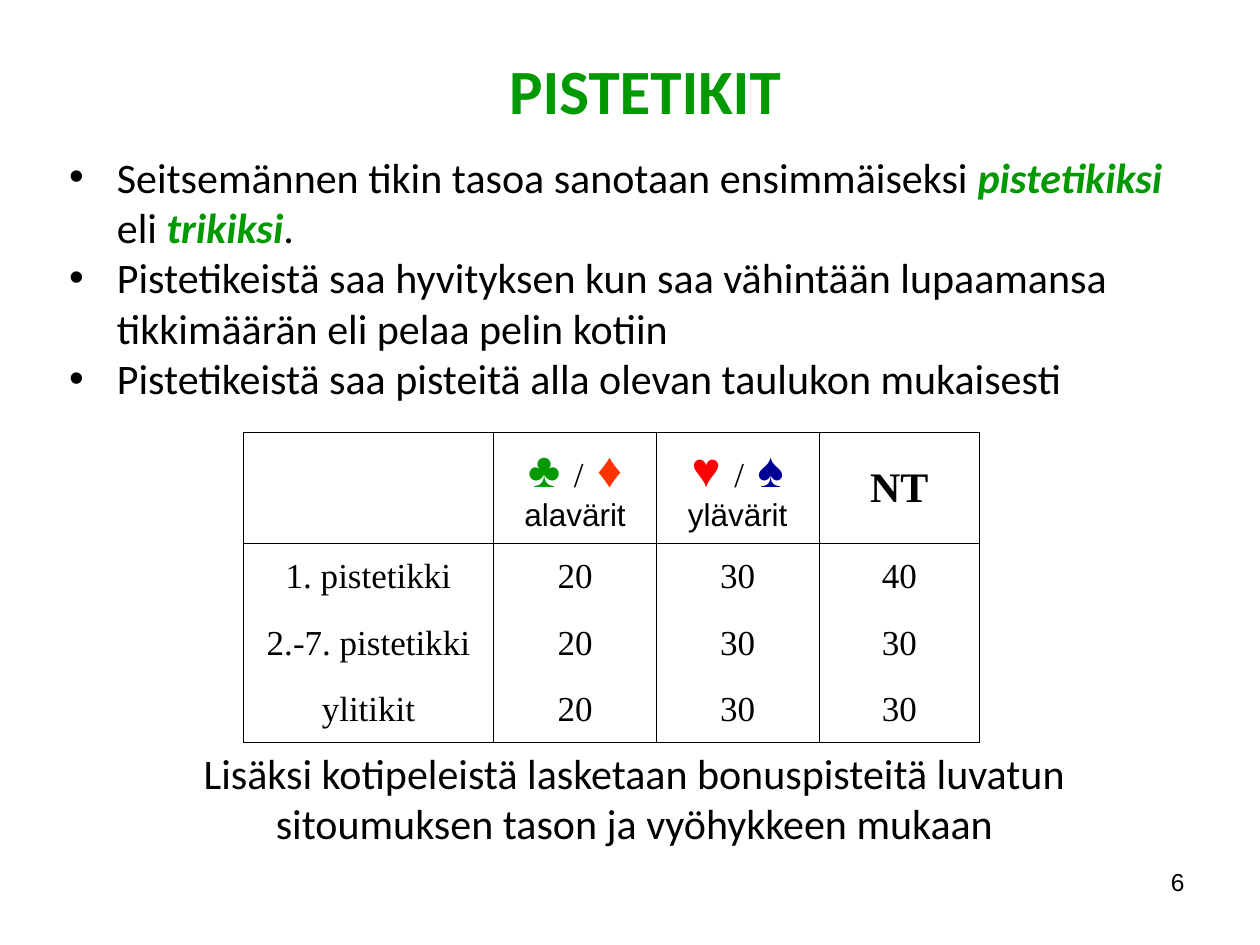
from dataclasses import dataclass

from lxml.etree import SubElement
from pptx import Presentation
from pptx.dml.color import RGBColor
from pptx.enum.text import MSO_ANCHOR as Anchor, PP_ALIGN as Align
from pptx.oxml.ns import qn
from pptx.util import Inches, Pt


@dataclass(frozen=True)
class Theme:
    black: str = "000000"
    green: str = "009900"
    orange: str = "FF3300"
    red: str = "FF0000"
    blue: str = "000099"
    sans: str = "Calibri"
    serif: str = "Times New Roman"
    symbol: str = "Arial"
    title: int = 36
    suit: int = 28
    body: int = 24
    cell: int = 20
    label: int = 18
    number: int = 14


T = Theme()


def write(p, text, font=T.sans, size=T.body, color=T.black, bold=False, italic=False):
    """Append one formatted run to paragraph p."""
    r = p.add_run()
    r.text = text
    f = r.font
    f.name, f.size, f.bold, f.italic = font, Pt(size), bold, italic
    f.color.rgb = RGBColor.from_string(color)


class Deck:
    def __init__(self, theme, width=10, height=7.5):
        self.t = theme
        self.prs = Presentation()
        self.prs.slide_width, self.prs.slide_height = Inches(width), Inches(height)
        self.s = self.prs.slides.add_slide(self.prs.slide_layouts[5])

    def area(self, x, y, w, h):
        """Turn percentages of the slide into lengths."""
        sw, sh = self.prs.slide_width, self.prs.slide_height
        return [int(v * full / 100) for v, full in zip((x, y, w, h), (sw, sh, sw, sh))]

    def title(self, text, *area):
        sp = self.s.shapes.title
        sp.left, sp.top, sp.width, sp.height = self.area(*area)
        tf = sp.text_frame
        tf.vertical_anchor = Anchor.TOP
        p = tf.paragraphs[0]
        p.alignment = Align.CENTER
        write(p, text, size=self.t.title, color=self.t.green, bold=True)

    def text(self, paragraphs, *area, align=Align.LEFT, bullet=False):
        """Each paragraph is a list of (text, format) pairs."""
        tf = self.s.shapes.add_textbox(*self.area(*area)).text_frame
        tf.word_wrap = True
        for i, runs in enumerate(paragraphs):
            p = tf.add_paragraph() if i else tf.paragraphs[0]
            p.alignment = align
            if bullet:
                self.bullet(p)
            for text, style in runs:
                write(p, text, **style)

    def bullet(self, p, indent=0.38):
        pPr = p._p.get_or_add_pPr()
        pPr.set("marL", str(Inches(indent)))
        pPr.set("indent", str(-Inches(indent)))
        SubElement(pPr, qn("a:buFont"), typeface=self.t.symbol)
        SubElement(pPr, qn("a:buChar"), char="•")

    def table(self, rows, widths, heights, *area):
        """Each cell is a list of lines, each line a list of (text, format) pairs."""
        frame = self.s.shapes.add_table(len(rows), len(widths), *self.area(*area))
        tbl = frame.table
        for col, w in zip(tbl.columns, widths):
            col.width = int(w * frame.width / sum(widths))
        for row, h in zip(tbl.rows, heights):
            row.height = int(h * frame.height / sum(heights))
        for i, row in enumerate(rows):
            for j, lines in enumerate(row):
                cell = tbl.cell(i, j)
                cell.vertical_anchor = Anchor.MIDDLE
                p = cell.text_frame.paragraphs[0]
                p.alignment = Align.CENTER
                p.space_before = Pt(4 if i else 2)
                for n, line in enumerate(lines):
                    if n:
                        p.add_line_break()
                    for text, style in line:
                        write(p, text, **style)
                # Rules frame the header and the body; body rows have none between
                sides = ["L", "R"] + ["T"] * (i < 2) + ["B"] * (i in (0, len(rows) - 1))
                self.borders(cell, sides)
                cell.fill.background()

    def borders(self, cell, sides):
        tcPr = cell._tc.get_or_add_tcPr()
        for side in "LRTB":
            shown = side in sides
            ln = SubElement(tcPr, qn(f"a:ln{side}"), w=str(Pt(0.5) if shown else 0))
            if shown:
                fill = SubElement(ln, qn("a:solidFill"))
                SubElement(fill, qn("a:srgbClr"), val=self.t.black)
            else:
                SubElement(ln, qn("a:noFill"))


def suit_header(left, left_color, right, right_color, label):
    suit = dict(font=T.symbol, size=T.suit)
    return [
        [(left, dict(suit, color=left_color)),
         *SLASH,
         (f" {right}", dict(suit, color=right_color))],
        [(label, dict(font=T.symbol, size=T.label))],
    ]


CELL = dict(font=T.serif, size=T.cell)
SLASH = [("/", CELL)]
TERM = dict(color=T.green, bold=True, italic=True)


def main():
    deck = Deck(T)
    deck.title("PISTETIKIT", 8.3, 4.8, 85.8, 9.47)

    # Rules of scoring
    deck.text([
        [("Seitsemännen tikin tasoa sanotaan ensimmäiseksi ", {}), ("pistetikiksi", TERM),
         (" eli ", {}), ("trikiksi", TERM), (".", {})],
        [("Pistetikeistä saa hyvityksen kun saa vähintään lupaamansa "
          "tikkimäärän eli pelaa pelin kotiin", {})],
        [("Pistetikeistä saa pisteitä alla olevan taulukon mukaisesti", {})],
    ], 4.5, 15.33, 89, 28.27, bullet=True)

    # Points per trick
    header = [
        [],
        suit_header("♣ ", T.green, "♦", T.orange, "alavärit"),
        suit_header("♥ ", T.red, "♠", T.blue, "ylävärit"),
        [[("NT", dict(font=T.serif, size=T.body, bold=True))]],
    ]
    points = [
        ("1. pistetikki", 20, 30, 40),
        ("2.-7. pistetikki", 20, 30, 30),
        ("ylitikit", 20, 30, 30),
    ]
    body = [[[[(str(v), CELL)]] for v in row] for row in points]
    deck.table([header] + body, (1.99, 1.16, 1.18, 1.18), (0.87, 0.47, 0.47, 0.47),
               19.3, 45.8, 55.1, 30.6)

    # Closing remark and slide number
    deck.text([[("Lisäksi kotipeleistä lasketaan bonuspisteitä luvatun "
                 "sitoumuksen tason ja vyöhykkeen mukaan", {})]],
              9, 78.4, 82.7, 12.13, align=Align.CENTER)
    deck.text([[("6", dict(font=T.symbol, size=T.number))]],
              71.7, 91.07, 23.3, 6.93, align=Align.RIGHT)

    deck.prs.save("out.pptx")


if __name__ == "__main__":
    main()
